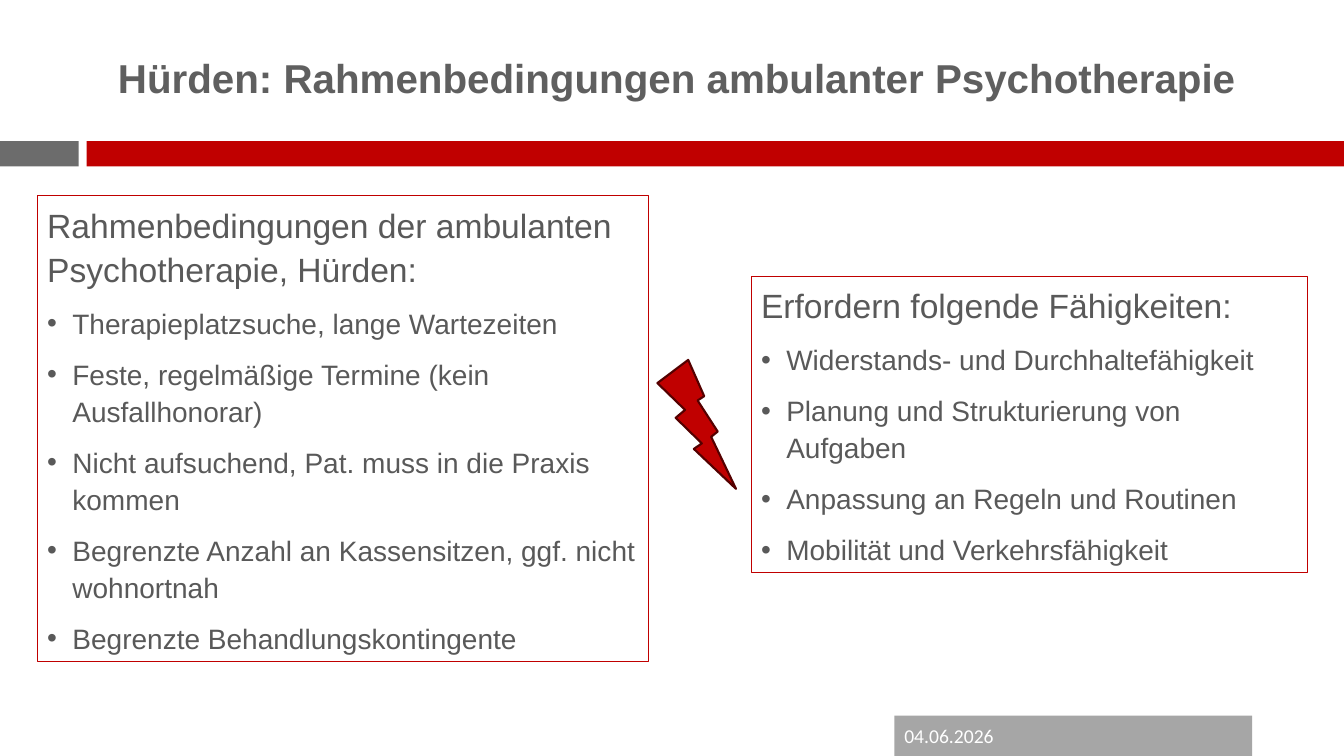
import pptx
import pptx.util
import pptx.dml.color
import pptx.enum.shapes
import pptx.enum.text
import lxml.etree

Inches, Pt = pptx.util.Inches, pptx.util.Pt
Kind = pptx.enum.shapes.MSO_SHAPE
Anchor = pptx.enum.text.MSO_ANCHOR
Fit = pptx.enum.text.MSO_AUTO_SIZE
Align = pptx.enum.text.PP_ALIGN

TITLE = "Hürden: Rahmenbedingungen ambulanter Psychotherapie"
DATE = "04.06.2026"
PANELS = [
    ((0.37, 1.94, 6.06, 4.62),
     "Rahmenbedingungen der ambulanten Psychotherapie, Hürden:",
     ["Therapieplatzsuche, lange Wartezeiten",
      "Feste, regelmäßige Termine (kein Ausfallhonorar)",
      "Nicht aufsuchend, Pat. muss in die Praxis kommen",
      "Begrenzte Anzahl an Kassensitzen, ggf. nicht wohnortnah",
      "Begrenzte Behandlungskontingente"]),
    ((7.45, 2.74, 5.52, 2.94),
     "Erfordern folgende Fähigkeiten:",
     ["Widerstands- und Durchhaltefähigkeit",
      "Planung und Strukturierung von Aufgaben",
      "Anpassung an Regeln und Routinen",
      "Mobilität und Verkehrsfähigkeit"]),
]
COLORS = {"red": "C00000", "dark": "540000", "gray": "6C6C6C", "foot": "A6A6A6",
          "title": "5F5F5F", "text": "595959", "white": "FFFFFF"}
WIDTH, HEIGHT = 13.33, 7.5
BAR_TOP, BAR_HIGH, BAR_LEFT = 1.4, 0.25, 0.86


def color(name):
    return pptx.dml.color.RGBColor.from_string(COLORS[name])


def add_shape(slide, kind, box, fill=None, line=None, width=0.75):
    shape = slide.shapes.add_shape(kind, *map(Inches, box))
    shape.shadow.inherit = False
    if fill:
        shape.fill.solid()
        shape.fill.fore_color.rgb = color(fill)
    else:
        shape.fill.background()
    if line:
        shape.line.color.rgb = color(line)
        shape.line.width = Pt(width)
    else:
        shape.line.fill.background()
    return shape


def add_bullet(para):
    props = para._p.get_or_add_pPr()
    props.set("marL", str(Inches(0.25)))
    props.set("indent", str(Inches(-0.25)))
    space = props.nsmap["a"]
    font = lxml.etree.SubElement(props, f"{{{space}}}buFont")
    font.set("typeface", "Arial")
    mark = lxml.etree.SubElement(props, f"{{{space}}}buChar")
    mark.set("char", "•")


def write(para, text, size=20, face="Arial", ink="text", bold=False,
          bullet=False, before=0, spacing=None):
    para.alignment = Align.LEFT
    if bullet:
        add_bullet(para)
    para.space_before = Pt(before)
    if spacing:
        para.line_spacing = spacing
    run = para.add_run()
    run.text = text
    run.font.size = Pt(size)
    run.font.name = face
    run.font.bold = bold
    run.font.color.rgb = color(ink)


def add_panel(slide, box, head, items):
    frame = add_shape(slide, Kind.RECTANGLE, box, line="red").text_frame
    frame.word_wrap = True
    frame.auto_size = Fit.SHAPE_TO_FIT_TEXT
    frame.vertical_anchor = Anchor.TOP
    write(frame.paragraphs[0], head, size=24, spacing=1.1)
    for item in items:
        write(frame.add_paragraph(), item, bullet=True, before=10, spacing=1.1)


def set_title(slide):
    title = slide.shapes.title
    title.left, title.top, title.width, title.height = map(
        Inches, (1.07, 0.23, 11.65, 1.08))
    frame = title.text_frame
    frame.word_wrap = True
    frame.auto_size = Fit.NONE
    frame.vertical_anchor = Anchor.MIDDLE
    write(frame.paragraphs[0], TITLE, size=28.8, ink="title", bold=True)


def main():
    deck = pptx.Presentation()
    deck.slide_width, deck.slide_height = Inches(WIDTH), Inches(HEIGHT)
    slide = deck.slides.add_slide(deck.slide_layouts[5])
    set_title(slide)
    for left, wide, fill in [(0, 0.78, "gray"), (BAR_LEFT, WIDTH - BAR_LEFT, "red")]:
        add_shape(slide, Kind.RECTANGLE, (left, BAR_TOP, wide, BAR_HIGH), fill)
    foot = add_shape(slide, Kind.RECTANGLE, (8.87, HEIGHT - 0.4, 3.55, 0.4), "foot")
    foot.text_frame.vertical_anchor = Anchor.MIDDLE
    write(foot.text_frame.paragraphs[0], DATE, size=14, face="Calibri", ink="white")
    for box, head, items in PANELS:
        add_panel(slide, box, head, items)
    add_shape(slide, Kind.LIGHTNING_BOLT, (6.52, 3.57, 0.78, 1.28),
              "red", line="dark", width=1.5)
    deck.save("out.pptx")


if __name__ == "__main__":
    main()
